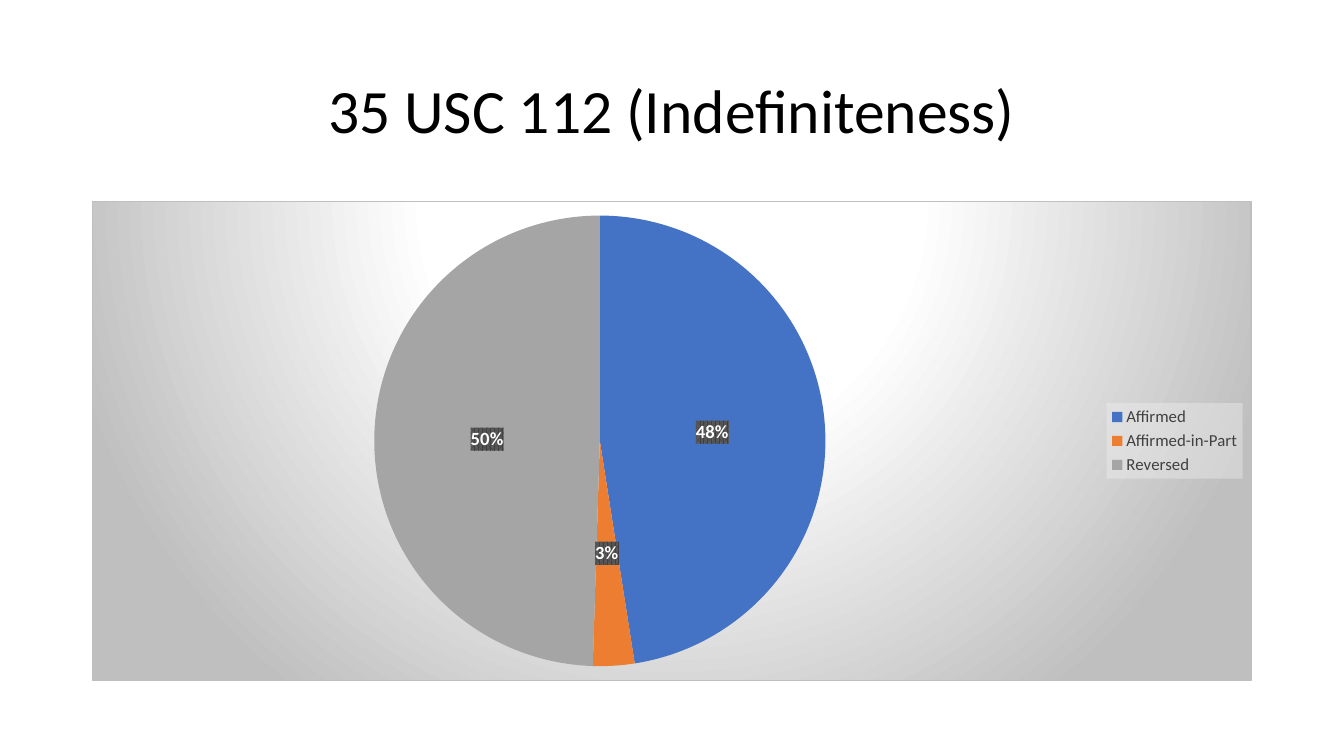
from pptx import Presentation
from pptx.chart.data import CategoryChartData
from pptx.dml.color import RGBColor
from pptx.enum.chart import XL_CHART_TYPE, XL_LABEL_POSITION, XL_LEGEND_POSITION
from pptx.enum.text import MSO_ANCHOR, PP_ALIGN
from pptx.oxml import parse_xml
from pptx.oxml.ns import nsdecls, qn
from pptx.util import Cm, Pt

PIE = XL_CHART_TYPE.PIE
LABEL_CENTER = XL_LABEL_POSITION.CENTER
LEGEND_RIGHT = XL_LEGEND_POSITION.RIGHT
MIDDLE = MSO_ANCHOR.MIDDLE
CENTER = PP_ALIGN.CENTER

BLACK = RGBColor(0x00, 0x00, 0x00)
WHITE = RGBColor(0xFF, 0xFF, 0xFF)
DARK_GRAY = RGBColor(0x40, 0x40, 0x40)
MID_GRAY = RGBColor(0x59, 0x59, 0x59)
SILVER = RGBColor(0xBF, 0xBF, 0xBF)
PALE_GRAY = RGBColor(0xF2, 0xF2, 0xF2)
BLUE = RGBColor(0x44, 0x72, 0xC4)
ORANGE = RGBColor(0xED, 0x7D, 0x31)
GRAY = RGBColor(0xA5, 0xA5, 0xA5)

FONT = "Calibri"
TITLE_ONLY = 5
MARGIN = Cm(2.33)
CONTENT_WIDTH = Cm(29.21)
OUTCOMES = [
    ("Affirmed", 48, BLUE),
    ("Affirmed-in-Part", 3, ORANGE),
    ("Reversed", 50, GRAY),
]

PANEL_FORMAT = f"""
<a:gradFill><a:gsLst>
<a:gs pos="0"><a:srgbClr val="{WHITE}"/></a:gs>
<a:gs pos="39000"><a:srgbClr val="{WHITE}"/></a:gs>
<a:gs pos="100000"><a:srgbClr val="{SILVER}"/></a:gs>
</a:gsLst><a:path path="circle">
<a:fillToRect l="50000" t="-80000" r="50000" b="180000"/></a:path></a:gradFill>
<a:ln w="9525"><a:solidFill><a:srgbClr val="{SILVER}"/></a:solidFill></a:ln>"""
LEGEND_FORMAT = f"""
<a:solidFill><a:srgbClr val="{PALE_GRAY}"><a:alpha val="39000"/></a:srgbClr></a:solidFill>
<a:ln><a:noFill/></a:ln>"""
LABEL_FORMAT = f"""
<a:pattFill prst="pct75"><a:fgClr><a:srgbClr val="{DARK_GRAY}"/></a:fgClr>
<a:bgClr><a:srgbClr val="{MID_GRAY}"/></a:bgClr></a:pattFill>
<a:ln><a:noFill/></a:ln>"""


def set_font(font, size, color, bold=False):
    font.name = FONT
    font.size = Pt(size)
    font.color.rgb = color
    font.bold = bold


def set_background(element, formatting):
    properties = parse_xml(f'<c:spPr {nsdecls("c", "a")}>{formatting}</c:spPr>')
    element.find(qn("c:txPr")).addprevious(properties)


def add_title(slide, heading, left, top, width, height):
    title = slide.shapes.title
    title.left, title.top, title.width, title.height = left, top, width, height
    title.text_frame.text = heading
    title.text_frame.vertical_anchor = MIDDLE
    paragraph = title.text_frame.paragraphs[0]
    paragraph.alignment = CENTER
    paragraph.line_spacing = 0.9
    set_font(paragraph.runs[0].font, 44, BLACK)


def add_outcome_pie(slide, left, top, width, height):
    outcome_data = CategoryChartData()
    outcome_data.categories = [name for name, _, _ in OUTCOMES]
    outcome_data.add_series("Series 1", [value for _, value, _ in OUTCOMES])
    pie = slide.shapes.add_chart(PIE, left, top, width, height, outcome_data).chart
    pie.has_title = False
    set_font(pie.font, 10, BLACK)
    set_background(pie._chartSpace, PANEL_FORMAT)

    pie.has_legend = True
    pie.legend.position = LEGEND_RIGHT
    pie.legend.include_in_layout = False
    set_font(pie.legend.font, 12, DARK_GRAY)
    set_background(pie.legend._element, LEGEND_FORMAT)

    pie.plots[0].vary_by_categories = True
    outcomes = pie.plots[0].series[0]
    for index, (_, _, color) in enumerate(OUTCOMES):
        wedge = outcomes.points[index].format
        wedge.fill.solid()
        wedge.fill.fore_color.rgb = color
        wedge.line.fill.background()

    labels = outcomes.data_labels
    labels.show_percentage = True
    labels.show_value = False
    labels.number_format = "0%"
    labels.number_format_is_linked = False
    labels.position = LABEL_CENTER
    set_font(labels.font, 13.3, WHITE, bold=True)
    set_background(labels._element, LABEL_FORMAT)


def main():
    deck = Presentation()
    deck.slide_width, deck.slide_height = Cm(33.87), Cm(19.05)
    slide = deck.slides.add_slide(deck.slide_layouts[TITLE_ONLY])
    add_title(slide, "35 USC 112 (Indefiniteness)", MARGIN, Cm(1.01), CONTENT_WIDTH, Cm(3.68))
    add_outcome_pie(slide, MARGIN, Cm(5.07), CONTENT_WIDTH, Cm(12.08))
    deck.save("out.pptx")


if __name__ == "__main__":
    main()
